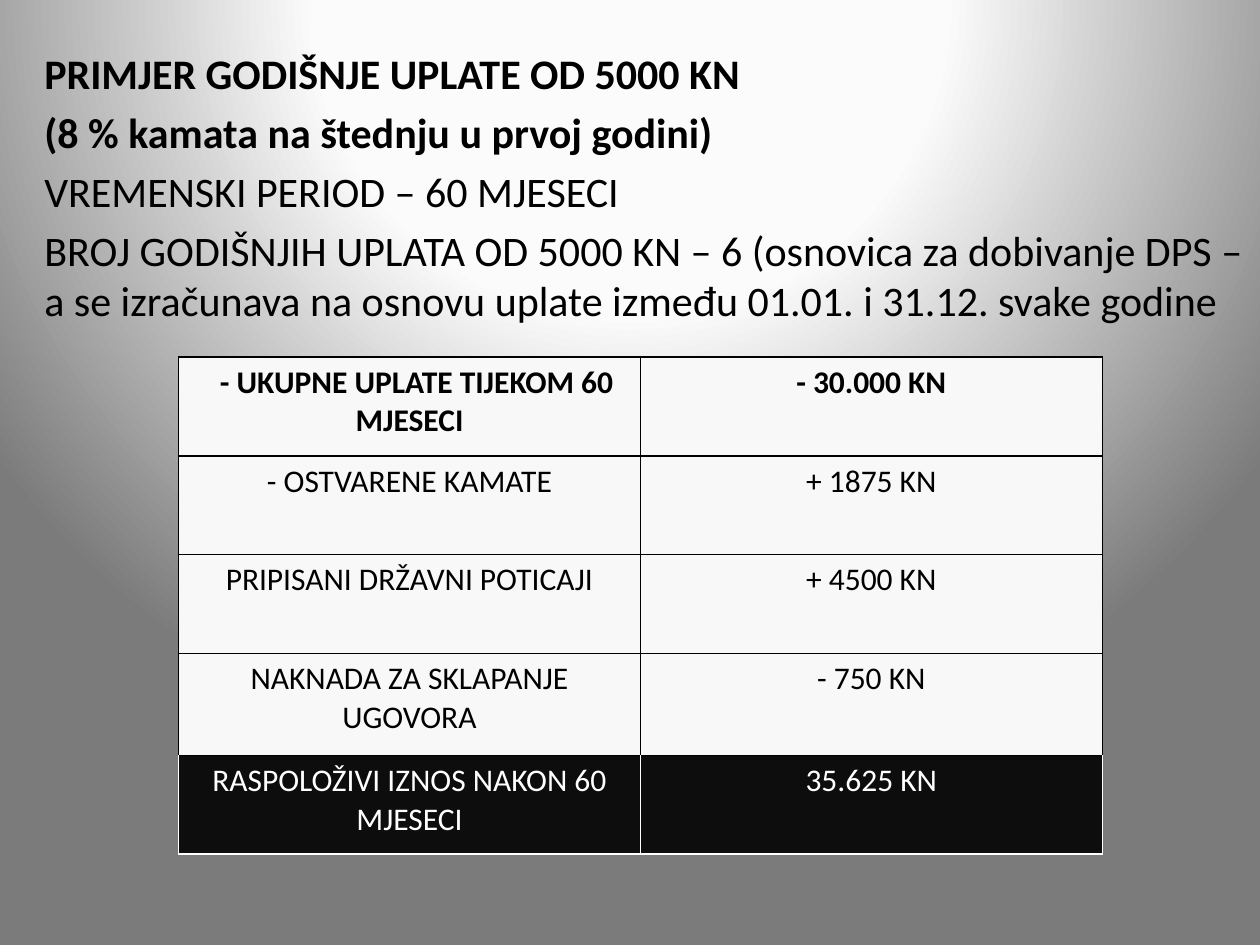
"""Build a slide showing a savings example with a summary table."""
from dataclasses import dataclass

from pptx import Presentation
from pptx.dml.color import RGBColor
from pptx.enum.text import PP_ALIGN
from pptx.oxml import parse_xml
from pptx.oxml.ns import nsdecls
from pptx.util import Cm, Pt

LEFT, CENTER = PP_ALIGN.LEFT, PP_ALIGN.CENTER
FONT = "Calibri"
COLORS = {
    "black": "000000",
    "white": "FFFFFF",
    "cell": "F8F8F8",
    "total": "0D0D0D",
    "glow": "FCFCFC",
    "mid": "FBFBFB",
    "edge": "7B7B7B",
}
COL_WIDTH = Cm(9.31)


@dataclass
class Row:
    """One table row: label, amount and look."""

    label: str
    amount: str
    bold: bool = False
    height: float = 1.99
    fill: str = "cell"
    color: str = "black"
    indent: float = 0


INTRO = [
    ("PRIMJER GODIŠNJE UPLATE OD 5000 KN", True),
    ("(8 % kamata na štednju u prvoj godini)", True),
    ("VREMENSKI PERIOD – 60 MJESECI", False),
    ("BROJ GODIŠNJIH UPLATA OD 5000 KN – 6 (osnovica za dobivanje DPS – "
     "a se izračunava na osnovu uplate između 01.01. i 31.12. svake godine", False),
]
ROWS = [
    Row("- UKUPNE UPLATE TIJEKOM 60 MJESECI", "- 30.000 KN", bold=True, indent=0.29),
    Row("- OSTVARENE KAMATE", "+ 1875 KN"),
    Row("PRIPISANI DRŽAVNI POTICAJI", "+ 4500 KN"),
    Row("NAKNADA ZA SKLAPANJE UGOVORA", "- 750 KN", height=2.06),
    Row("RASPOLOŽIVI IZNOS NAKON 60 MJESECI", "35.625 KN", fill="total", color="white"),
]


def write(p, text: str, *, size: int, bold: bool = False, color: str = "black",
          align=LEFT, indent: float = 0) -> None:
    """Put formatted text into a paragraph without a bullet."""
    p.alignment = align
    pPr = p._p.get_or_add_pPr()
    pPr.set("marL", "0")
    pPr.set("indent", str(int(Cm(indent))))
    pPr.append(parse_xml(f"<a:buNone {nsdecls('a')}/>"))
    r = p.add_run()
    r.text = text
    r.font.name, r.font.size, r.font.bold = FONT, Pt(size), bold
    r.font.color.rgb = RGBColor.from_string(COLORS[color])


def set_background(s) -> None:
    """Give the slide a circular gradient centred above its top edge."""
    stops = "".join(
        f'<a:gs pos="{pos * 1000}"><a:srgbClr val="{COLORS[name]}"/></a:gs>'
        for pos, name in [(0, "glow"), (40, "mid"), (100, "edge")])
    s.element.cSld.insert(0, parse_xml(
        f'<p:bg {nsdecls("p", "a")}><p:bgPr><a:gradFill rotWithShape="1">'
        f'<a:gsLst>{stops}</a:gsLst><a:path path="circle">'
        '<a:fillToRect l="50000" t="-80000" r="50000" b="180000"/></a:path>'
        '</a:gradFill><a:effectLst/></p:bgPr></p:bg>'))


def set_borders(cell, color: str) -> None:
    """Outline a cell; its top edge is always black."""
    tcPr = cell._tc.get_or_add_tcPr()
    for i, side in enumerate(("L", "R", "T", "B")):
        value = COLORS["black" if side == "T" else color]
        tcPr.insert(i, parse_xml(
            f'<a:ln{side} {nsdecls("a")} w="{int(Pt(1))}"><a:solidFill>'
            f'<a:srgbClr val="{value}"/></a:solidFill></a:ln{side}>'))


def add_intro(s) -> None:
    """Fill the body placeholder with the opening lines."""
    sp = s.placeholders[1]
    sp.left, sp.top, sp.width, sp.height = Cm(0.64), Cm(0.84), Cm(24.76), Cm(5.72)
    tf = sp.text_frame
    for i, (text, bold) in enumerate(INTRO):
        p = tf.add_paragraph() if i else tf.paragraphs[0]
        write(p, text, size=24, bold=bold)


def add_summary(s) -> None:
    """Draw the table of payments, interest and fees."""
    height = Cm(sum(row.height for row in ROWS))
    table = s.shapes.add_table(
        len(ROWS), 2, Cm(3.6), Cm(7.2), COL_WIDTH * 2, height).table
    table.first_row = table.horz_banding = False
    for i, row in enumerate(ROWS):
        table.rows[i].height = Cm(row.height)
        for j, (text, indent) in enumerate([(row.label, row.indent), (row.amount, 0)]):
            cell = table.cell(i, j)
            cell.fill.solid()
            cell.fill.fore_color.rgb = RGBColor.from_string(COLORS[row.fill])
            set_borders(cell, row.color)
            write(cell.text_frame.paragraphs[0], text, size=18, bold=row.bold,
                  color=row.color, align=CENTER, indent=indent)


def main() -> None:
    """Create and save the presentation."""
    prs = Presentation()
    prs.slide_width, prs.slide_height = Cm(25.4), Cm(19.05)
    s = prs.slides.add_slide(prs.slide_layouts[1])
    title = s.shapes.title.element
    title.getparent().remove(title)
    set_background(s)
    add_summary(s)
    add_intro(s)
    prs.save("out.pptx")


if __name__ == "__main__":
    main()
